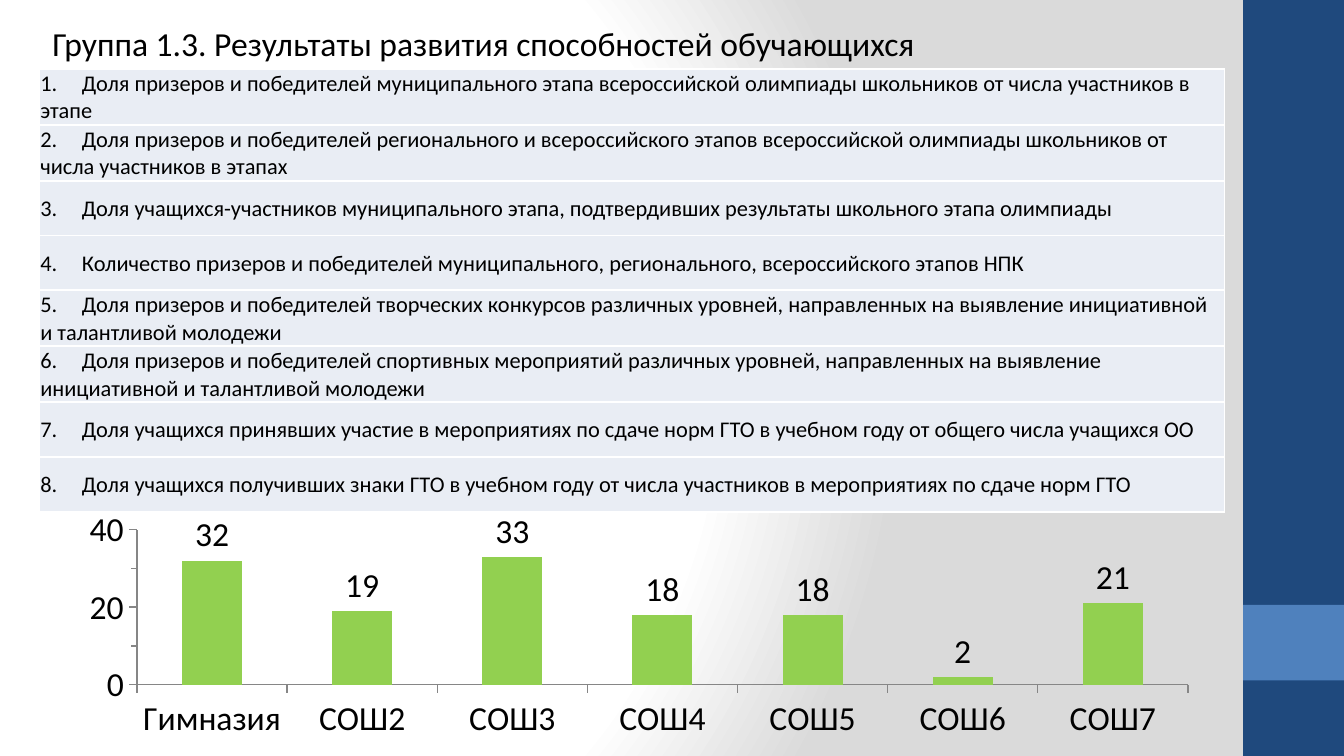
import pptx
import pptx.chart.data
import pptx.dml.color
import pptx.enum.chart
import pptx.enum.shapes
import pptx.enum.text
import pptx.oxml
import pptx.oxml.ns
import pptx.util

WIDTH, HEIGHT = pptx.util.Inches(10), pptx.util.Inches(5.625)
FONT = "Calibri"
COLORS = {"text": "000000", "white": "FFFFFF", "edge": "DADADA", "navy": "1F497D",
          "blue": "4F81BD", "row": "E9EDF4", "bar": "92D050", "axis": "868686"}
TITLE = "Группа 1.3. Результаты развития способностей обучающихся"
CRITERIA = [
    "Доля призеров и победителей муниципального этапа всероссийской олимпиады школьников от числа участников в этапе",
    "Доля призеров и победителей регионального и всероссийского этапов всероссийской олимпиады школьников от числа участников в этапах",
    "Доля учащихся-участников муниципального этапа, подтвердивших результаты школьного этапа олимпиады",
    "Количество призеров и победителей муниципального, регионального, всероссийского этапов НПК",
    "Доля призеров и победителей творческих конкурсов различных уровней, направленных на выявление инициативной и талантливой молодежи",
    "Доля призеров и победителей спортивных мероприятий различных уровней, направленных на выявление инициативной и талантливой молодежи",
    "Доля учащихся принявших участие в мероприятиях по сдаче норм ГТО в учебном году от общего числа учащихся ОО",
    "Доля учащихся получивших знаки ГТО в учебном году от числа участников в мероприятиях по сдаче норм ГТО",
]
SCORES = {"Гимназия": 32, "СОШ2": 19, "СОШ3": 33, "СОШ4": 18, "СОШ5": 18, "СОШ6": 2, "СОШ7": 21}


def color(name):
    return pptx.dml.color.RGBColor.from_string(COLORS[name])


def xml(source, prefix="a"):
    head, tail = source.split(">", 1)
    slash = "/" if head.endswith("/") else ""
    return pptx.oxml.parse_xml(f"{head.rstrip('/')} {pptx.oxml.ns.nsdecls(prefix)}{slash}>{tail}")


def area(left, top, width, height):
    return [round(share * side) for share, side in
            zip((left, top, width, height), (WIDTH, HEIGHT, WIDTH, HEIGHT))]


def style_font(font, size):
    font.name = FONT
    font.size = pptx.util.Pt(size)
    font.color.rgb = color("text")


def set_background(page):
    page.background.fill.gradient()
    gradient = page.element.find(".//" + pptx.oxml.ns.qn("a:gradFill"))
    stops = "".join(f'<a:gs pos="{share * 1000}"><a:srgbClr val="{COLORS[name]}"/></a:gs>'
                    for share, name in [(0, "white"), (75, "white"), (100, "edge")])
    gradient.getparent().replace(gradient, xml(
        f'<a:gradFill rotWithShape="1"><a:gsLst>{stops}</a:gsLst><a:path path="circle">'
        '<a:fillToRect l="20000" t="50000" r="100000" b="50000"/></a:path></a:gradFill>'))


def add_band(page, place, name):
    band = page.shapes.add_shape(pptx.enum.shapes.MSO_SHAPE.RECTANGLE, *place)
    band.shadow.inherit = False
    band.fill.solid()
    band.fill.fore_color.rgb = color(name)
    band.line.fill.background()


def set_title(page, place):
    title = page.shapes.title
    title.left, title.top, title.width, title.height = place
    frame = title.text_frame
    frame.text = TITLE
    frame.vertical_anchor = pptx.enum.text.MSO_ANCHOR.TOP
    para = frame.paragraphs[0]
    para.alignment = pptx.enum.text.PP_ALIGN.LEFT
    style_font(para.runs[0].font, 18)


def fill_cell(cell, text):
    cell.text_frame.text = text
    cell.vertical_anchor = pptx.enum.text.MSO_ANCHOR.MIDDLE
    cell.margin_left = cell.margin_right = cell.margin_top = pptx.util.Inches(0.01)
    cell.margin_bottom = 0
    para = cell.text_frame.paragraphs[0]
    style_font(para.runs[0].font, 12)
    stop = pptx.util.Inches(0.31)
    para._p.get_or_add_pPr().append(
        xml(f'<a:tabLst><a:tab pos="{stop}" algn="l"/></a:tabLst>'))
    cell.fill.solid()
    cell.fill.fore_color.rgb = color("row")
    for index, side in enumerate("LRTB"):
        cell._tc.tcPr.insert(index, xml(
            f'<a:ln{side} w="12700"><a:solidFill><a:srgbClr val="{COLORS["white"]}"/>'
            f'</a:solidFill></a:ln{side}>'))


def add_criteria(page, place):
    table = page.shapes.add_table(len(CRITERIA), 1, *place).table
    table.first_row = table.horz_banding = False
    for index, text in enumerate(CRITERIA):
        fill_cell(table.cell(index, 0), f"{index + 1}.\t{text}")


def style_axis(axis):
    axis.has_major_gridlines = False
    axis.major_tick_mark = pptx.enum.chart.XL_TICK_MARK.OUTSIDE
    axis.format.line.color.rgb = color("axis")
    axis.format.line.width = pptx.util.Pt(0.75)


def set_plot_area(chart, **shares):
    plot_area = chart._chartSpace.chart.plotArea
    for layout in plot_area.findall(pptx.oxml.ns.qn("c:layout")):
        plot_area.remove(layout)
    values = "".join(f'<c:{key} val="{share}"/>' for key, share in shares.items())
    plot_area.insert(0, xml(
        '<c:layout><c:manualLayout><c:layoutTarget val="inner"/><c:xMode val="edge"/>'
        f'<c:yMode val="edge"/>{values}</c:manualLayout></c:layout>', "c"))


def add_scores(page, place):
    data = pptx.chart.data.CategoryChartData()
    data.categories = list(SCORES)
    data.add_series("Series 1", list(SCORES.values()))
    kind = pptx.enum.chart.XL_CHART_TYPE.COLUMN_CLUSTERED
    chart = page.shapes.add_chart(kind, *place, data).chart
    chart.has_legend = chart.has_title = False
    style_font(chart.font, 18)
    plot = chart.plots[0]
    plot.gap_width = 150
    plot.vary_by_categories = False
    fill = plot.series[0].format.fill
    fill.solid()
    fill.fore_color.rgb = color("bar")
    labels = plot.series[0].data_labels
    labels.show_value = True
    labels.position = pptx.enum.chart.XL_LABEL_POSITION.OUTSIDE_END
    style_font(labels.font, 18)
    style_axis(chart.category_axis)
    axis = chart.value_axis
    style_axis(axis)
    axis.minor_tick_mark = pptx.enum.chart.XL_TICK_MARK.OUTSIDE
    axis.minimum_scale, axis.maximum_scale = 0, 40
    axis.major_unit, axis.minor_unit = 20, 10
    set_plot_area(chart, x=0.06, y=0.1, w=0.92, h=0.65)


def main():
    deck = pptx.Presentation()
    deck.slide_width, deck.slide_height = WIDTH, HEIGHT
    page = deck.slides.add_slide(deck.slide_layouts[5])
    set_background(page)
    add_band(page, area(0.925, 0, 0.075, 1), "navy")
    add_band(page, area(0.925, 0.8, 0.075, 0.1), "blue")
    set_title(page, area(0.029, 0.021, 0.701, 0.072))
    add_criteria(page, area(0.029, 0.091, 0.882, 0.58))
    add_scores(page, area(0.051, 0.669, 0.85, 0.316))
    deck.save("out.pptx")


if __name__ == "__main__":
    main()
